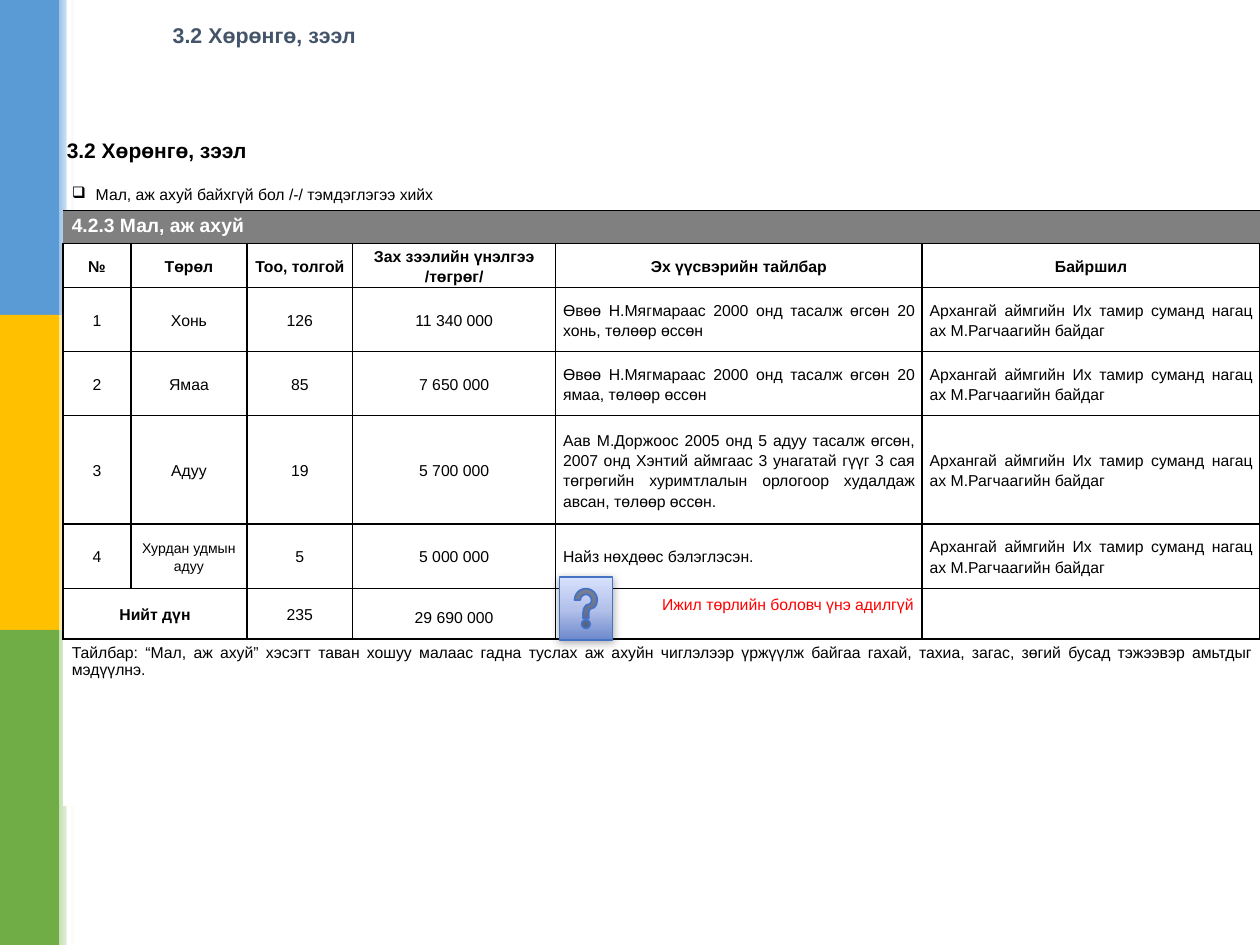
from lxml import etree
from pptx import Presentation
from pptx.dml.color import RGBColor
from pptx.enum.shapes import MSO_SHAPE
from pptx.enum.text import MSO_ANCHOR, PP_ALIGN
from pptx.oxml import parse_xml
from pptx.oxml.ns import nsdecls, qn
from pptx.util import Inches, Pt

RECT, HELP = MSO_SHAPE.RECTANGLE, MSO_SHAPE.ACTION_BUTTON_HELP
TOP, MIDDLE = MSO_ANCHOR.TOP, MSO_ANCHOR.MIDDLE
LEFT, CENTER, RIGHT, JUSTIFY = PP_ALIGN.LEFT, PP_ALIGN.CENTER, PP_ALIGN.RIGHT, PP_ALIGN.JUSTIFY

COLORS = {
    "black": "000000", "white": "FFFFFF", "slate": "44546A", "gray": "808080", "red": "FF0000",
    "blue": "5B9BD5", "gold": "FFC000", "green": "70AD47",
    "pale_blue": "9DC3E6", "pale_gold": "FFE699", "pale_green": "C5E0B4",
    "icon_line": "4472C4", "icon_dark": "6D89CB", "icon_mid": "B2C0EA", "icon_light": "D8E1FE",
}
COLS = [0.54, 0.92, 0.84, 1.61, 2.91, 2.68]
ROWS = [0.23, 0.25, 0.34, 0.51, 0.51, 0.86, 0.51, 0.38, 1.33]
HEADERS = ["№", "Төрөл", "Тоо, толгой", "Зах зээлийн үнэлгээ /төгрөг/",
           "Эх үүсвэрийн тайлбар", "Байршил"]
PLACE = "Архангай аймгийн Их тамир суманд нагац ах М.Рагчаагийн байдаг"
LIVESTOCK = [
    ["1", "Хонь", "126", "11 340 000",
     "Өвөө Н.Мягмараас 2000 онд тасалж өгсөн 20 хонь, төлөөр өссөн", PLACE],
    ["2", "Ямаа", "85", "7 650 000",
     "Өвөө Н.Мягмараас 2000 онд тасалж өгсөн 20 ямаа, төлөөр өссөн", PLACE],
    ["3", "Адуу", "19", "5 700 000",
     "Аав М.Доржоос 2005 онд 5 адуу тасалж өгсөн, 2007 онд Хэнтий аймгаас 3 унагатай гүүг "
     "3 сая төгрөгийн хуримтлалын орлогоор худалдаж авсан, төлөөр өссөн.", PLACE],
    ["4", "Хурдан удмын адуу", "5", "5 000 000", "Найз нөхдөөс бэлэглэсэн.", PLACE],
]
NOTE = ("Тайлбар: “Мал, аж ахуй” хэсэгт таван хошуу малаас гадна туслах аж ахуйн чиглэлээр "
        "үржүүлж байгаа гахай, тахиа, загас, зөгий бусад тэжээвэр амьтдыг мэдүүлнэ.")


def rgb(name):
    """Return the named colour."""
    return RGBColor.from_string(COLORS[name])


def write(tf, text, size, color="black", bold=False, align=LEFT):
    """Set and format a single paragraph."""
    tf.text = text
    p = tf.paragraphs[0]
    p.alignment = align
    for r in p.runs:
        r.font.name, r.font.size, r.font.bold = "Arial", Pt(size), bold
        r.font.color.rgb = rgb(color)
    return p


def add_text(s, x, y, w, h, text, size, color):
    """Add a bold one-line heading."""
    tf = s.shapes.add_textbox(Inches(x), Inches(y), Inches(w), Inches(h)).text_frame
    tf.word_wrap = True
    tf.vertical_anchor = MIDDLE
    tf.margin_left = tf.margin_right = Inches(0.07)
    tf.margin_top = tf.margin_bottom = Inches(0.04)
    write(tf, text, size, color, True)


def add_box(s, x, y, w, h, color, shape=RECT):
    """Add a plain filled shape without a line."""
    sp = s.shapes.add_shape(shape, Inches(x), Inches(y), Inches(w), Inches(h))
    sp.shadow.inherit = False
    sp.fill.solid()
    sp.fill.fore_color.rgb = rgb(color)
    sp.line.fill.background()
    return sp


def set_gradient(sp, stops, angle):
    """Replace a solid fill with a linear gradient of (position, colour) stops."""
    marks = "".join(f'<a:gs pos="{pos * 1000}"><a:srgbClr val="{COLORS[c]}"/></a:gs>'
                    for pos, c in stops)
    grad = parse_xml(f'<a:gradFill {nsdecls("a")} rotWithShape="1"><a:gsLst>{marks}</a:gsLst>'
                     f'<a:lin ang="{angle * 60000}" scaled="0"/></a:gradFill>')
    solid = sp._element.spPr.find(qn("a:solidFill"))
    solid.getparent().replace(solid, grad)


def add_sidebar(s):
    """Add three stacked colour bands with their fading edges."""
    for i, color in enumerate(["blue", "gold", "green"]):
        add_box(s, 0, 2.5 * i, 0.47, 2.5, color)
        edge = add_box(s, 0.47, 2.5 * i, 0.12, 2.5, color)
        set_gradient(edge, [(0, "pale_" + color), (100, "white")], 0)
    add_box(s, 0.53, 0, 0.04, 7.5, "white")


def add_help_icon(s):
    """Add the question-mark button with a soft shadow."""
    sp = add_box(s, 4.44, 4.58, 0.42, 0.5, "icon_dark", HELP)
    set_gradient(sp, [(0, "icon_dark"), (48, "icon_mid"), (100, "icon_light")], 270)
    sp.line.color.rgb = rgb("icon_line")
    sp.line.width = Pt(1)
    effects = sp._element.spPr.find(qn("a:effectLst"))
    shadow = etree.SubElement(effects, qn("a:outerShdw"), blurRad=str(Pt(5)), dist=str(Pt(1)),
                              dir="5400000", rotWithShape="0")
    color = etree.SubElement(shadow, qn("a:srgbClr"), val=COLORS["black"])
    etree.SubElement(color, qn("a:alpha"), val="32000")


def style_cell(cell, fill, sides):
    """Give a cell its fill and black borders on the named sides."""
    tc_pr = cell._tc.get_or_add_tcPr()
    for side in "LRTB":
        ln = etree.SubElement(tc_pr, qn("a:ln" + side), w=str(Pt(1)))
        if side in sides:
            paint = etree.SubElement(ln, qn("a:solidFill"))
            etree.SubElement(paint, qn("a:srgbClr"), val=COLORS["black"])
        else:
            etree.SubElement(ln, qn("a:noFill"))
    if fill:
        cell.fill.solid()
        cell.fill.fore_color.rgb = rgb(fill)
    else:
        cell.fill.background()


def fill_wide(cell, text, size=9, color="black", bold=False, align=LEFT, top=0.04):
    """Write into a top-anchored cell."""
    cell.vertical_anchor = TOP
    cell.margin_left = cell.margin_right = Inches(0.07)
    cell.margin_top, cell.margin_bottom = Inches(top), Inches(0.04)
    return write(cell.text_frame, text, size, color, bold, align)


def fill_grid(cell, text, size=9, bold=False, align=CENTER):
    """Write into a middle-anchored cell."""
    cell.vertical_anchor = MIDDLE
    cell.margin_left = cell.margin_right = Inches(0.06)
    cell.margin_top = cell.margin_bottom = 0
    write(cell.text_frame, text, size, bold=bold, align=align).line_spacing = 1.15


def add_bullet(p):
    """Give a paragraph a hanging box bullet."""
    p_pr = p._p.get_or_add_pPr()
    p_pr.set("marL", str(Inches(0.19)))
    p_pr.set("indent", str(-Inches(0.19)))
    etree.SubElement(p_pr, qn("a:buChar"), char="❑")


def add_livestock_table(s):
    """Add the livestock table with its caption, totals and note."""
    table = s.shapes.add_table(len(ROWS), len(COLS), Inches(0.5), Inches(1.44),
                               Inches(sum(COLS)), Inches(sum(ROWS))).table
    table.first_row = table.horz_banding = False
    for col, width in zip(table.columns, COLS):
        col.width = Inches(width)
    for row, height in zip(table.rows, ROWS):
        row.height = Inches(height)
    last = len(ROWS) - 1
    looks = {0: (None, "B"), 1: ("gray", "TB"), last: ("white", "T")}
    for i in range(len(ROWS)):
        for j in range(len(COLS)):
            style_cell(table.cell(i, j), *looks.get(i, ("white", "LRTB")))
    for i in (0, 1, last):
        table.cell(i, 0).merge(table.cell(i, len(COLS) - 1))

    add_bullet(fill_wide(table.cell(0, 0), "Мал, аж ахуй байхгүй бол /-/ тэмдэглэгээ хийх"))
    fill_wide(table.cell(1, 0), "4.2.3 Мал, аж ахуй", 11, "white", True)
    for j, text in enumerate(HEADERS):
        fill_grid(table.cell(2, j), text, bold=True)
    for i, record in enumerate(LIVESTOCK, 3):
        for j, text in enumerate(record):
            size = 8 if j == 1 and len(text) > 10 else 9
            fill_grid(table.cell(i, j), text, size, align=JUSTIFY if j > 3 else CENTER)

    total = last - 1
    table.cell(total, 0).merge(table.cell(total, 1))
    fill_grid(table.cell(total, 0), "Нийт дүн", bold=True)
    fill_grid(table.cell(total, 2), "235")
    fill_wide(table.cell(total, 3), "29 690 000", align=CENTER, top=0.17)
    fill_wide(table.cell(total, 4), "Ижил төрлийн боловч үнэ адилгүй", color="red",
              align=RIGHT, top=0.06)
    fill_wide(table.cell(last, 0), NOTE, align=JUSTIFY)


def main():
    """Build the slide and save it."""
    prs = Presentation()
    prs.slide_width, prs.slide_height = Inches(10), Inches(7.5)
    s = prs.slides.add_slide(prs.slide_layouts[6])
    add_sidebar(s)
    add_text(s, 1.3, 0.12, 6.75, 0.31, "3.2 Хөрөнгө, зээл", 12.2, "slate")
    add_livestock_table(s)
    add_text(s, 0.46, 1.04, 6.81, 0.31, "3.2 Хөрөнгө, зээл", 12, "black")
    add_help_icon(s)
    prs.save("out.pptx")


if __name__ == "__main__":
    main()
